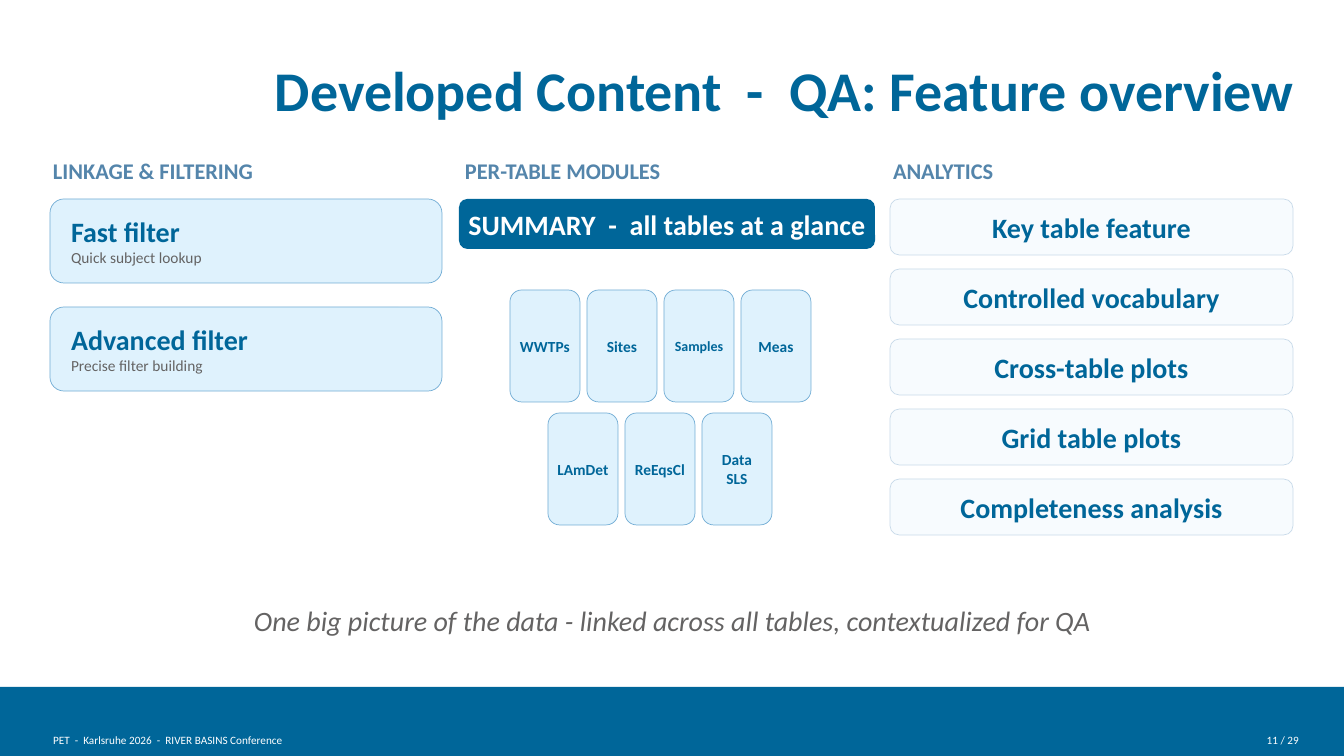
from dataclasses import dataclass

from pptx import Presentation
from pptx import util as u
from pptx.dml.color import RGBColor
from pptx.enum import shapes, text

SLIDE_W, SLIDE_H = 1344, 756
EMU_PER_PX = 12192000 / SLIDE_W
LEFT, CENTER, RIGHT = text.PP_ALIGN.LEFT, text.PP_ALIGN.CENTER, text.PP_ALIGN.RIGHT
TOP, MIDDLE = text.MSO_ANCHOR.TOP, text.MSO_ANCHOR.MIDDLE


@dataclass(frozen=True)
class Theme:
    font: str = "Calibri"
    blue: str = "006699"
    heading: str = "5485AB"
    gray: str = "646363"
    white: str = "FFFFFF"
    card_fill: str = "DFF2FD"
    card_line: str = "72ADD5"
    pale_fill: str = "F7FBFE"
    pale_line: str = "C8DAEA"
    title_pt: int = 40
    body_pt: int = 20
    heading_pt: int = 16
    small_pt: int = 11
    tight_pt: int = 10
    footer_pt: int = 8


T = Theme()


def px(n):
    return u.Emu(round(n * EMU_PER_PX))


def set_insets(tf, left, top, right, bottom):
    tf.margin_left, tf.margin_top = px(left), px(top)
    tf.margin_right, tf.margin_bottom = px(right), px(bottom)


def style(p, size, color, bold=False, italic=False, align=LEFT):
    p.alignment = align
    p.font.name = T.font
    p.font.size = u.Pt(size)
    p.font.bold = bold
    p.font.italic = italic
    p.font.color.rgb = RGBColor.from_string(color)


def add_label(slide, box, words, size, color, anchor=TOP, **look):
    tf = slide.shapes.add_textbox(*map(px, box)).text_frame
    tf.word_wrap = True
    tf.auto_size = text.MSO_AUTO_SIZE.SHAPE_TO_FIT_TEXT
    tf.vertical_anchor = anchor
    set_insets(tf, 3, 3, 3, 3)
    p = tf.paragraphs[0]
    p.text = words
    style(p, size, color, **look)


def add_panel(slide, box, fill, line=None, kind=shapes.MSO_SHAPE.ROUNDED_RECTANGLE):
    sp = slide.shapes.add_shape(kind, *map(px, box))
    sp.shadow.inherit = False
    sp.fill.solid()
    sp.fill.fore_color.rgb = RGBColor.from_string(fill)
    if line:
        sp.line.color.rgb = RGBColor.from_string(line)
        sp.line.width = u.Pt(0.5)
    else:
        sp.line.fill.background()
    tf = sp.text_frame
    tf.word_wrap = True
    tf.vertical_anchor = MIDDLE
    set_insets(tf, 5, 3, 5, 3)
    return tf


def add_button(slide, box, words, size, color, fill, line=None):
    """Rounded panel with one centred bold caption."""
    p = add_panel(slide, box, fill, line).paragraphs[0]
    p.text = words
    style(p, size, color, bold=True, align=CENTER)


def add_filter_card(slide, box, name, note):
    tf = add_panel(slide, box, T.card_fill, T.card_line)
    set_insets(tf, 17, 8, 14, 8)
    p = tf.paragraphs[0]
    p.text = name
    style(p, T.body_pt, T.blue, bold=True)
    p = tf.add_paragraph()
    p.text = note
    style(p, T.small_pt, T.gray)


def add_tile_row(slide, center, top, names):
    """Row of table tiles, centred on a given x."""
    w, h, gap = 70, 112, 7
    left = center - (len(names) * (w + gap) - gap) // 2
    for i, name in enumerate(names):
        size = T.tight_pt if name == "Samples" else T.small_pt
        add_button(slide, (left + i * (w + gap), top, w, h), name, size,
                   T.blue, T.card_fill, T.card_line)


def add_filters(slide):
    cards = [("Fast filter", "Quick subject lookup"),
             ("Advanced filter", "Precise filter building")]
    for i, (name, note) in enumerate(cards):
        add_filter_card(slide, (50, 199 + 108 * i, 392, 84), name, note)


def add_modules(slide):
    add_button(slide, (459, 199, 416, 50), "SUMMARY  -  all tables at a glance",
               T.body_pt, T.white, T.blue)
    rows = [("WWTPs", "Sites", "Samples", "Meas"), ("LAmDet", "ReEqsCl", "Data SLS")]
    for i, names in enumerate(rows):
        add_tile_row(slide, 660, 290 + 123 * i, names)


def add_analytics(slide):
    names = ("Key table feature", "Controlled vocabulary", "Cross-table plots",
             "Grid table plots", "Completeness analysis")
    for i, name in enumerate(names):
        add_button(slide, (890, 199 + 70 * i, 403, 56), name, T.body_pt,
                   T.blue, T.pale_fill, T.pale_line)


def add_footer(slide):
    add_panel(slide, (0, 687, SLIDE_W, 69), T.blue, kind=shapes.MSO_SHAPE.RECTANGLE)
    add_label(slide, (50, 730, 700, 19),
              "PET  -  Karlsruhe 2026  -  RIVER BASINS Conference", T.footer_pt, T.white)
    add_label(slide, (1190, 730, 112, 19), "11 / 29", T.footer_pt, T.white, align=RIGHT)


def main():
    prs = Presentation()
    prs.slide_width, prs.slide_height = px(SLIDE_W), px(SLIDE_H)
    slide = prs.slides.add_slide(prs.slide_layouts[6])

    add_footer(slide)
    add_label(slide, (272, 52, 1050, 74), "Developed Content  -  QA: Feature overview",
              T.title_pt, T.blue, anchor=MIDDLE, bold=True)
    headings = [(50, 392, "LINKAGE & FILTERING"), (462, 392, "PER-TABLE MODULES"),
                (890, 403, "ANALYTICS")]
    for left, width, words in headings:
        add_label(slide, (left, 154, width, 33), words, T.heading_pt, T.heading, bold=True)
    add_filters(slide)
    add_modules(slide)
    add_analytics(slide)
    add_label(slide, (51, 600, 1243, 40),
              "One big picture of the data - linked across all tables, contextualized for QA",
              T.body_pt, T.gray, anchor=MIDDLE, italic=True, align=CENTER)
    prs.save("out.pptx")


if __name__ == "__main__":
    main()
